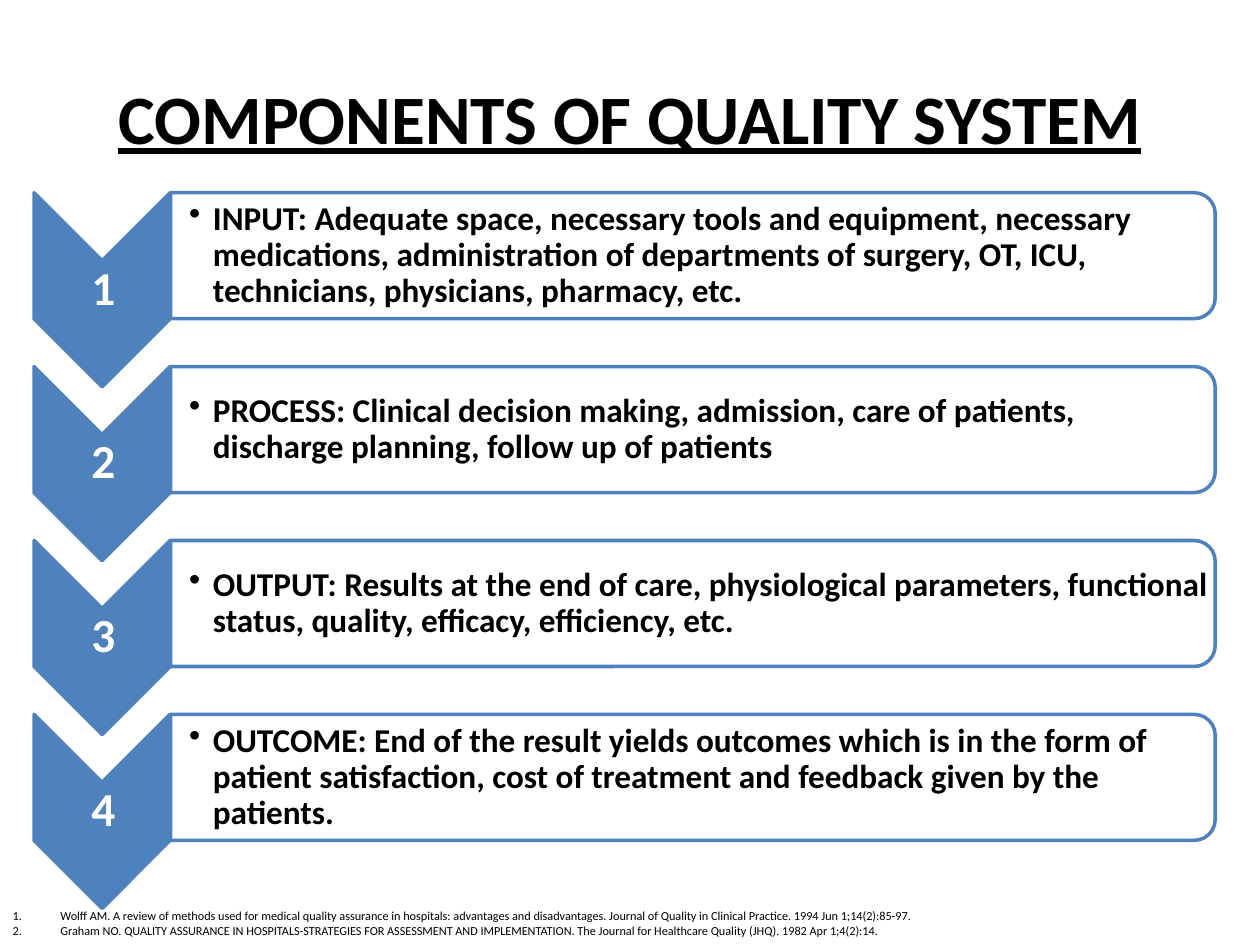
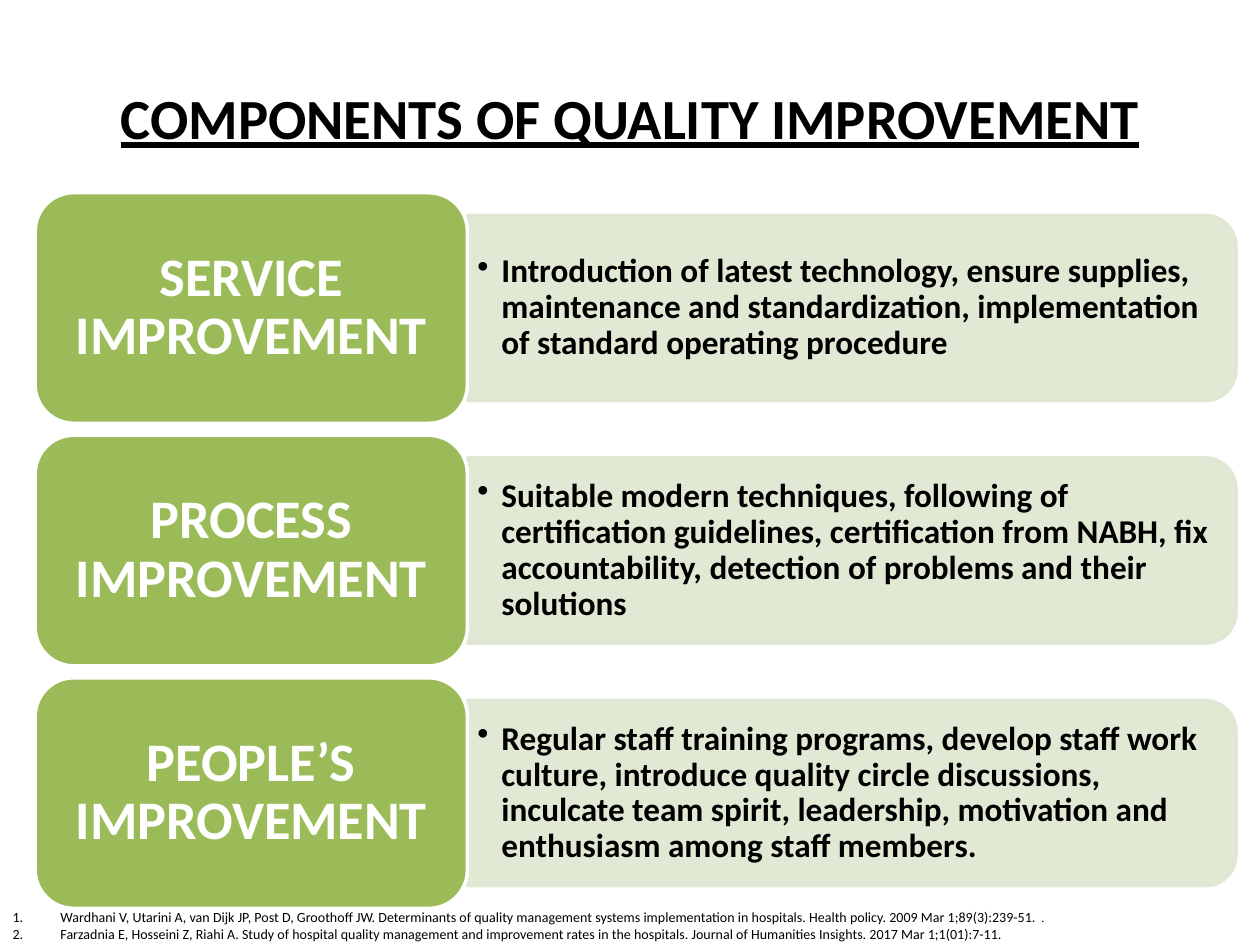
from lxml import etree
from pptx import Presentation, util as u
from pptx.dml.color import RGBColor
from pptx.enum import shapes, text
from pptx.oxml.ns import qn

# Shared look
HUE = {"ink": "000000", "white": "FFFFFF", "blue": "4F81BD",
       "green": "9BBB59", "pale": "DEE7D1"}
TITLE = {"name": "Calibri", "bold": True, "underline": True}
BODY = {"name": "Calibri", "bold": True, "size": u.Pt(19)}
NOTE = {"name": "Calibri", "bold": False}
DOT = ("buChar", {"char": "•"}, 1.9)
COUNT = ("buAutoNum", {"type": "arabicPeriod"}, 3.8)
MID, TOP = text.MSO_ANCHOR.MIDDLE, text.MSO_ANCHOR.TOP
LEFT, CENTER = text.PP_ALIGN.LEFT, text.PP_ALIGN.CENTER
KIND = shapes.MSO_SHAPE

# Grid of 100 columns by 75 rows of square cells
deck = Presentation()
deck.slide_width, deck.slide_height = u.Inches(10), u.Inches(7.5)
CELL = deck.slide_width / 100


def draw(page, kind, box, fill, line, clear=None, turn=False):
    """Add a shape that covers box as seen, after a quarter turn if asked."""
    x, y, w, h = box
    if turn:
        x, y, w, h = x + (w - h) / 2, y + (h - w) / 2, h, w
    item = page.shapes.add_shape(kind, *[round(n * CELL) for n in (x, y, w, h)])
    item.rotation = 90 if turn else 0
    item.shadow.inherit = False
    item.line.width = u.Pt(2)
    item.line.fill.solid()
    item.fill.solid()
    item.fill.fore_color.rgb = RGBColor.from_string(HUE[fill])
    item.line.color.rgb = RGBColor.from_string(HUE[line])
    for hue in clear or ():
        props = item.fill if hue == "fill" else item.line.fill
        mark = RGBColor.from_string(HUE[fill])
        props.fore_color.rgb = mark
        root = item.element.spPr if hue == "fill" else item.line._get_or_add_ln()
        rgb = root.find(qn("a:solidFill")).find(qn("a:srgbClr"))
        etree.SubElement(rgb, qn("a:alpha"), val="90000")
    return item


def write(frame, paras, look, hue="ink", align=LEFT, anchor=MID,
          pads=None, bullet=None, gap=None):
    """Fill a text frame; each paragraph is a list of (words, size) runs."""
    frame.word_wrap = True
    frame.auto_size = text.MSO_AUTO_SIZE.NONE
    frame.vertical_anchor = anchor
    if pads:
        sides = zip(("left", "top", "right", "bottom"), pads)
        for side, pad in sides:
            setattr(frame, "margin_" + side, u.Inches(pad))
    for i, runs in enumerate(paras):
        para = frame.paragraphs[0] if i == 0 else frame.add_paragraph()
        if bullet:
            tag, vals, step = bullet
            props = para._p.get_or_add_pPr()
            props.set("marL", str(round(step * CELL)))
            props.set("indent", str(-round(step * CELL)))
            etree.SubElement(props, qn("a:" + tag), vals)
        form = {"alignment": align, "line_spacing": gap, "space_before": u.Pt(0)}
        for key, val in form.items():
            setattr(para, key, val)
        for words, size in runs:
            run = para.add_run()
            run.text = words
            for key, val in {**look, "size": u.Pt(size)}.items():
                setattr(run.font, key, val)
            run.font.color.rgb = RGBColor.from_string(HUE[hue])


# Titles and references
heads = [("COMPONENTS OF QUALITY SYSTEM", 39.6),
         ("COMPONENTS OF QUALITY IMPROVEMENT", 32.4)]
refs = [
    [[("Wolff AM. A review of methods used for medical quality assurance in hospitals: "
       "advantages and disadvantages. Journal of Quality in Clinical Practice. "
       "1994 Jun 1;14(2):85-97.", 7)],
     [("Graham NO. QUALITY ASSURANCE IN HOSPITALS-STRATEGIES FOR ASSESSMENT AND "
       "IMPLEMENTATION. The Journal for Healthcare Quality (JHQ). "
       "1982 Apr 1;4(2):14.", 7)]],
    [[("Wardhani V, Utarini A, van Dijk JP, Post D, Groothoff JW. Determinants of quality "
       "management systems implementation in hospitals. Health policy. "
       "2009 Mar 1;89(3):239-51. ", 8), (".", 7)],
     [("Farzadnia E, Hosseini Z, Riahi A. Study of hospital quality management and "
       "improvement rates in the hospitals. Journal of Humanities Insights. "
       "2017 Mar 1;1(01):7-11.", 8)]],
]
pages = []
for head, notes in zip(heads, refs):
    page = deck.slides.add_slide(deck.slide_layouts[1])
    title, body = page.placeholders
    spots = [(title, (5, 3, 90, 12.5)), (body, (0, 71.6, 100, 3.4))]
    for item, box in spots:
        for key, val in zip(("left", "top", "width", "height"), box):
            setattr(item, key, round(val * CELL))
    write(title.text_frame, [[head]], TITLE, align=CENTER)
    write(body.text_frame, notes, NOTE, anchor=TOP, bullet=COUNT)
    pages.append(page)

# Slide 1: numbered chevrons with outlined bars
page = pages[0]
steps = [
    "INPUT: Adequate space, necessary tools and equipment, necessary medications, "
    "administration of departments of surgery, OT, ICU, technicians, physicians, "
    "pharmacy, etc.",
    "PROCESS: Clinical decision making, admission, care of patients, discharge "
    "planning, follow up of patients",
    "OUTPUT: Results at the end of care, physiological parameters, functional status, "
    "quality, efficacy, efficiency, etc.",
    "OUTCOME: End of the result yields outcomes which is in the form of patient "
    "satisfaction, cost of treatment and feedback given by the patients.",
]
for i, step in enumerate(steps):
    y = 15.3 + 13.8 * i
    draw(page, KIND.CHEVRON, (2.7, y, 10.8, 15.4), "blue", "blue", turn=True)
    draw(page, KIND.ROUND_2_SAME_RECTANGLE, (13.55, y, 82.9, 10), "white", "blue",
         clear=["fill"], turn=True)
    cells = [((2.8, y + 5.4, 10.8, 4.6), str(i + 1), 27, "white", CENTER,
              (0.02,) * 4, None),
             ((13.5, y + 0.5, 82.5, 9), step, 19, "ink", LEFT,
              (0.15, 0.01, 0.01, 0.01), DOT)]
    for box, words, size, hue, align, pads, bullet in cells:
        item = page.shapes.add_textbox(*[round(n * CELL) for n in box])
        write(item.text_frame, [[(words, size)]], BODY, hue, align,
              pads=pads, bullet=bullet, gap=0.9)

# Slide 2: green labels with pale bars
page = pages[1]
aims = [
    ("SERVICE IMPROVEMENT",
     "Introduction of latest technology, ensure supplies, maintenance and "
     "standardization, implementation of standard operating procedure"),
    ("PROCESS IMPROVEMENT",
     "Suitable modern techniques, following of certification guidelines, "
     "certification from NABH, fix accountability, detection of problems and "
     "their solutions"),
    ("PEOPLE’S IMPROVEMENT",
     "Regular staff training programs, develop staff work culture, introduce "
     "quality circle discussions, inculcate team spirit, leadership, motivation "
     "and enthusiasm among staff members."),
]
for i, (name, words) in enumerate(aims):
    y = 15.3 + 19.25 * i
    draw(page, KIND.ROUND_2_SAME_RECTANGLE, (37.1, y + 1.8, 61, 14.7), "pale", "pale",
         clear=["fill", "line"], turn=True)
    box = (37.1, y + 2.55, 60.3, 13.2)
    item = page.shapes.add_textbox(*[round(n * CELL) for n in box])
    write(item.text_frame, [[(words, 19)]], BODY, pads=(0.08, 0.04, 0.08, 0.04),
          bullet=DOT, gap=0.9)
    item = draw(page, KIND.ROUNDED_RECTANGLE, (2.8, y, 34.3, 18.3), "green", "white")
    write(item.text_frame, [[(name, 31)]], BODY, "white", CENTER,
          pads=(0.13, 0.06, 0.13, 0.06), gap=0.9)

deck.save("out.pptx")
